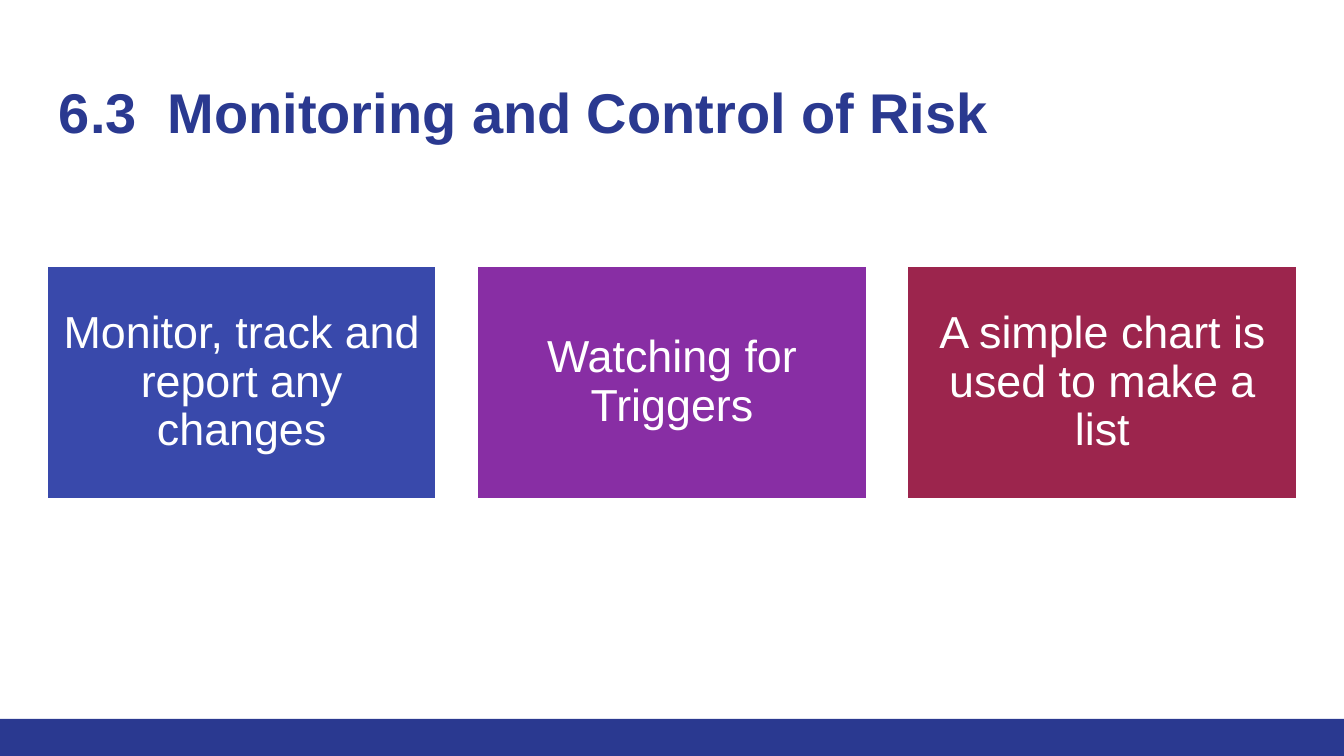
"""Build the slide on monitoring and control of risk."""
import pptx
import pptx.dml.color
import pptx.enum.shapes
import pptx.enum.text
import pptx.util

TITLE = "6.3  Monitoring and Control of Risk"
STEPS = [
    ("Monitor, track and report any changes", "blue"),
    ("Watching for Triggers", "purple"),
    ("A simple chart is used to make a list", "crimson"),
]
COLORS = {
    "navy": "2A3990",
    "blue": "3949AB",
    "purple": "882EA4",
    "crimson": "9C254D",
    "white": "FFFFFF",
}
FONT = "Arial"
PX = 914400 / 134.4
SLIDE_W, SLIDE_H = 1344, 756
MARGIN, CONTENT_W = 46, 1252
TITLE_TOP, TITLE_H = 60, 89
STEP_TOP, STEP_H, STEP_GAP = 265, 235, 39
FOOTER_H = 37
INSET, TITLE_INSET_TOP = 13, 18

ALIGN = pptx.enum.text.PP_ALIGN
ANCHOR = pptx.enum.text.MSO_ANCHOR


def px(length):
    return pptx.util.Emu(round(length * PX))


def rgb(name):
    return pptx.dml.color.RGBColor.from_string(COLORS[name])


def add_block(slide, left, top, width, height, fill, line=None):
    block = slide.shapes.add_shape(
        pptx.enum.shapes.MSO_SHAPE.RECTANGLE, px(left), px(top), px(width), px(height)
    )
    block.shadow.inherit = False
    block.fill.solid()
    block.fill.fore_color.rgb = rgb(fill)
    if line:
        block.line.color.rgb = rgb(line)
        block.line.width = pptx.util.Pt(2)
    else:
        block.line.fill.background()
    return block


def write(shape, text, size, color, bold=False, align=ALIGN.LEFT,
          anchor=ANCHOR.TOP, spacing=1.0, inset_top=INSET):
    frame = shape.text_frame
    frame.word_wrap = True
    frame.auto_size = pptx.enum.text.MSO_AUTO_SIZE.NONE
    frame.vertical_anchor = anchor
    frame.margin_left = frame.margin_right = frame.margin_bottom = px(INSET)
    frame.margin_top = px(inset_top)
    paragraph = frame.paragraphs[0]
    paragraph.alignment = align
    paragraph.line_spacing = spacing
    run = paragraph.add_run()
    run.text = text
    run.font.name = FONT
    run.font.size = pptx.util.Pt(size)
    run.font.bold = bold
    run.font.color.rgb = rgb(color)


def main():
    deck = pptx.Presentation()
    deck.slide_width, deck.slide_height = px(SLIDE_W), px(SLIDE_H)
    slide = deck.slides.add_slide(deck.slide_layouts.get_by_name("Title Only"))

    add_block(slide, 0, SLIDE_H - FOOTER_H, SLIDE_W, FOOTER_H, "navy")

    title = slide.shapes.title
    title.left, title.top = px(MARGIN), px(TITLE_TOP)
    title.width, title.height = px(CONTENT_W), px(TITLE_H)
    write(title, TITLE, 30, "navy", bold=True, inset_top=TITLE_INSET_TOP)

    step_w = (CONTENT_W - STEP_GAP * (len(STEPS) - 1)) / len(STEPS)
    for index, (text, fill) in enumerate(STEPS):
        left = MARGIN + index * (step_w + STEP_GAP)
        step = add_block(slide, left, STEP_TOP, step_w, STEP_H, fill, line="white")
        write(step, text, 24, "white", align=ALIGN.CENTER,
              anchor=ANCHOR.MIDDLE, spacing=0.9)

    deck.save("out.pptx")


if __name__ == "__main__":
    main()
